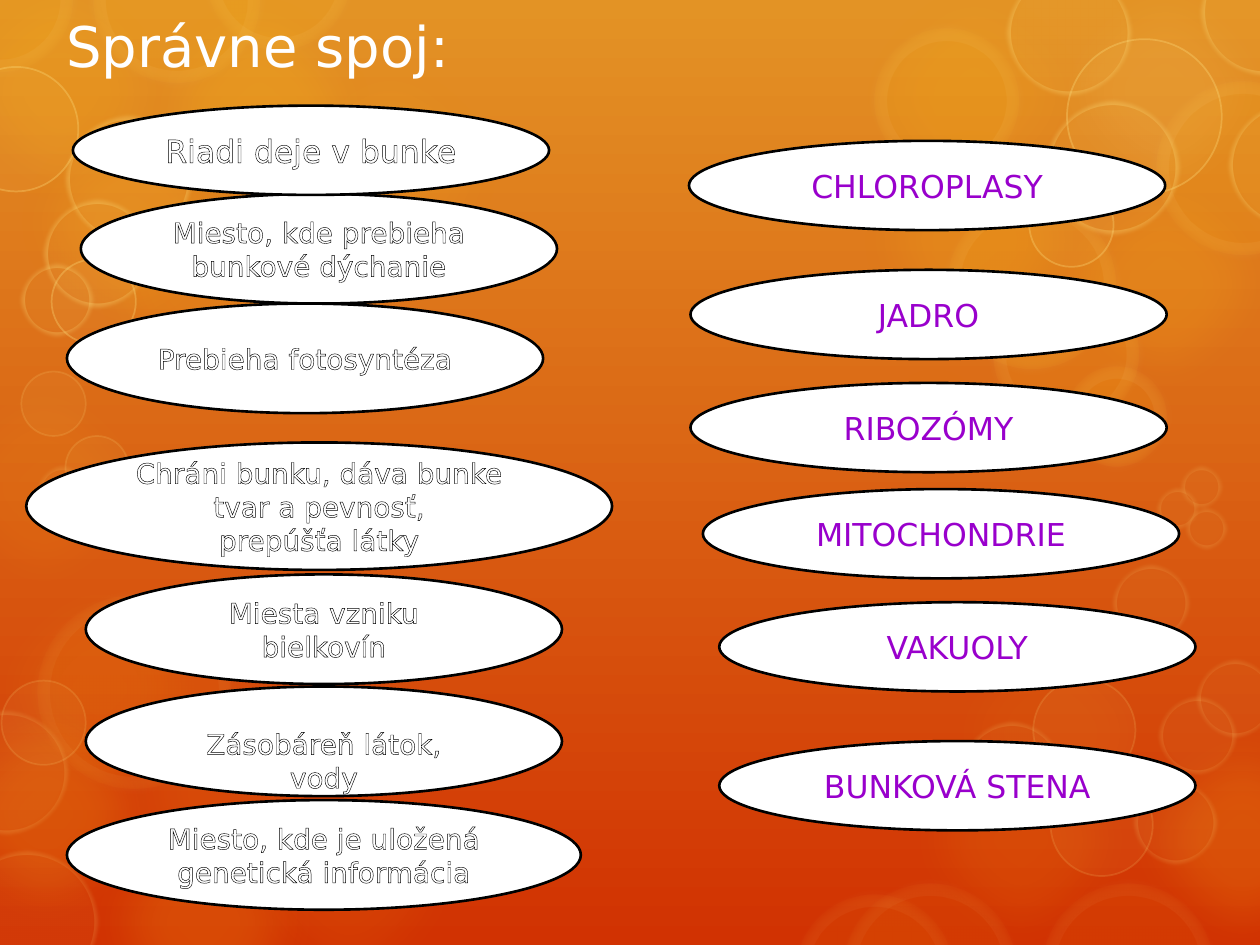
from dataclasses import dataclass

from lxml import etree
from pptx import Presentation
from pptx.dml.color import RGBColor
from pptx.enum import shapes, text
from pptx.oxml import ns
from pptx.util import Cm, Pt


@dataclass(frozen=True)
class Theme:
    font: str = "DejaVu Sans"
    top: str = "E39325"
    bottom: str = "D13202"
    amber: str = "FDC61B"
    yellow: str = "FFE281"
    cream: str = "FEEBAE"
    white: str = "FFFFFF"
    black: str = "000000"
    purple: str = "9900CC"
    title: int = 32
    large: int = 18
    small: int = 16


T = Theme()


def add_ellipse(left, top, width, height, fill, line=None, line_width=0):
    sp = s.shapes.add_shape(shapes.MSO_SHAPE.OVAL, Cm(left), Cm(top), Cm(width), Cm(height))
    sp.shadow.inherit = False
    sp.fill.solid()
    sp.fill.fore_color.rgb = RGBColor.from_string(fill)
    if line:
        sp.line.color.rgb = RGBColor.from_string(line)
        sp.line.width = Pt(line_width)
    else:
        sp.line.fill.background()
    return sp


def add_bubble(left, top, size, fill, opacity, soft, line=None, line_width=0, line_opacity=0):
    """Add a translucent circle; opacities in percent, soft edge in cm."""
    sp = add_ellipse(left, top, size, size, fill, line, line_width)
    spPr = sp._element.spPr
    colours = spPr.findall(".//" + ns.qn("a:srgbClr"))
    for colour, percent in zip(colours, (opacity, line_opacity)):
        etree.SubElement(colour, ns.qn("a:alpha"), val=str(percent * 1000))
    if soft:
        effects = spPr.find(ns.qn("a:effectLst"))
        etree.SubElement(effects, ns.qn("a:softEdge"), rad=str(Cm(soft)))


prs = Presentation()
prs.slide_width, prs.slide_height = Cm(25.4), Cm(19.05)
s = prs.slides.add_slide(prs.slide_layouts[6])

bg = s.background.fill
bg.gradient()
bg.gradient_angle = 270
for stop, colour, position in zip(bg.gradient_stops, (T.top, T.bottom), (0, 1)):
    stop.color.rgb = RGBColor.from_string(colour)
    stop.position = position

# Glows: left, top, opacity
GLOW_SIZE = 5.31
glows = [
    (-0.65, 11.23, 8), (1.45, 3.05, 10), (5.21, 0.79, 10), (1.45, 15.93, 16),
    (-1.42, -0.83, 14), (2.57, -0.46, 20), (0, 1.83, 15), (16.99, -0.75, 10),
    (20.83, 3.05, 15), (22.38, 14.27, 16), (18.52, 12.12, 5), (-1.74, 13.74, 16),
    (1.96, 13.31, 8), (16.99, 2.18, 15), (17.93, 14.27, 10), (4.39, 15.14, 8),
    (-1.77, 7.16, 8),
]
for left, top, opacity in glows:
    add_bubble(left, top, GLOW_SIZE, T.amber, opacity, 0.9)
add_bubble(20.83, -0.83, GLOW_SIZE, T.yellow, 10, 0.9)
add_bubble(17.15, 6.65, 3.38, T.amber, 10, 0.9)

# Rings by style: fill, opacity, soft edge, line, line width, line opacity; then left, top, size
rings = {
    (T.amber, 10, 0.2, T.cream, 14, 6): [
        (23.32, 1.65, 3.48), (17.63, 0.58, 2.9), (19.1, 4.04, 3.38), (20.04, 5.69, 2.9),
        (21.51, 7.39, 2.01), (1.9, -1.66, 3.33), (4.17, -1.9, 2.9), (-1.45, -1.47, 2.9)],
    (T.amber, 6, 0.2, T.cream, 14, 4): [
        (0.76, 12.01, 3.89), (16.04, 18.03, 3.18), (17, 17.81, 3.48), (21.02, 17.81, 3.43)],
    (T.yellow, 5, 0, T.yellow, 1, 15): [
        (0.03, 13.72, 1.7), (21.18, 15.6, 2.06), (20.83, 13.69, 2.06),
        (0.43, 7.49, 1.3), (1.32, 8.79, 1.27)],
    (T.yellow, 5, 0.1, T.yellow, 5, 15): [
        (-0.9, 17.15, 2.87), (-1.12, 14.33, 2.49), (19.38, 14.55, 2.06), (22.86, 15.75, 1.68),
        (22.43, 11.38, 1.55), (23.37, 14.05, 1.55), (24.13, 13.31, 1.55), (23.8, 9.4, 0.84),
        (23.32, 9.83, 0.84), (23.9, 10.24, 0.84), (0.76, 9.4, 0.99)],
    (T.yellow, 5, 0, T.yellow, 1, 30): [
        (-0.93, 1.35, 2.51), (1.04, 5.23, 1.7), (21.51, 0.79, 3.12), (20.75, 3.68, 1.7)],
    (T.yellow, 5, 0.1, T.yellow, 5, 30): [
        (1.32, 2.34, 2.54), (0.89, 4.04, 2.16), (0.43, 5.33, 1.45), (20.29, -0.6, 2.51),
        (24.21, -1.02, 2.54), (24.77, 2.08, 2.51), (21.08, 2.03, 2.69)],
}
for style, places in rings.items():
    for place in places:
        add_bubble(*place, *style)

tf = s.shapes.add_textbox(Cm(1.09), Cm(0.53), Cm(21.08), Cm(0.74)).text_frame
tf.word_wrap = True
tf.vertical_anchor = text.MSO_ANCHOR.MIDDLE
p = tf.paragraphs[0]
p.text = "Správne spoj:"
p.font.name, p.font.size = T.font, Pt(T.title)
p.font.color.rgb = RGBColor.from_string(T.white)

# Labels: wording, left, top, width, height, type size, text colour
W, H, TALL = 9.6, 1.8, 2.21
labels = [
    ("Miesto, kde prebieha bunkové dýchanie", 1.63, 3.91, W, TALL, T.small, T.white),
    ("Prebieha fotosyntéza", 1.35, 6.12, W, TALL, T.small, T.white),
    ("Chráni bunku, dáva bunke tvar a pevnosť,\nprepúšťa látky",
     0.53, 8.92, 11.81, 2.57, T.small, T.white),
    ("Miesta vzniku bielkovín", 1.73, 11.58, W, TALL, T.small, T.white),
    ("Zásobáreň látok, vody", 1.73, 13.84, W, TALL, T.small, T.white),
    ("Miesto, kde je uložená genetická informácia", 1.35, 16.13, 10.36, TALL, T.small, T.white),
    ("Riadi deje v bunke", 1.47, 2.13, W, H, T.large, T.white),
]
organelles = [
    ("CHLOROPLASY", 13.89, 2.84), ("JADRO", 13.92, 5.44), ("RIBOZÓMY", 13.92, 7.72),
    ("MITOCHONDRIE", 14.17, 9.86), ("VAKUOLY", 14.5, 12.14), ("BUNKOVÁ STENA", 14.5, 14.94),
]
labels += [(*organelle, W, H, T.large, T.purple) for organelle in organelles]

for wording, left, top, width, height, size, colour in labels:
    tf = add_ellipse(left, top, width, height, T.white, T.black, 1.5).text_frame
    tf.word_wrap = True
    tf.vertical_anchor = text.MSO_ANCHOR.MIDDLE
    tf.margin_left = tf.margin_right = Cm(0.3)
    if wording.startswith("Zásobáreň"):
        tf.margin_top = Cm(0.89)  # this label sits low in its ellipse
    tf.text = wording
    for p in tf.paragraphs:
        p.alignment = text.PP_ALIGN.CENTER
        p.font.name, p.font.size = T.font, Pt(size)
        p.font.color.rgb = RGBColor.from_string(colour)
        outline = etree.Element(ns.qn("a:ln"), w=str(Pt(0.75)))
        fill = etree.SubElement(outline, ns.qn("a:solidFill"))
        etree.SubElement(fill, ns.qn("a:srgbClr"), val=T.black)
        p._p.pPr.find(ns.qn("a:defRPr")).insert(0, outline)

prs.save("out.pptx")
